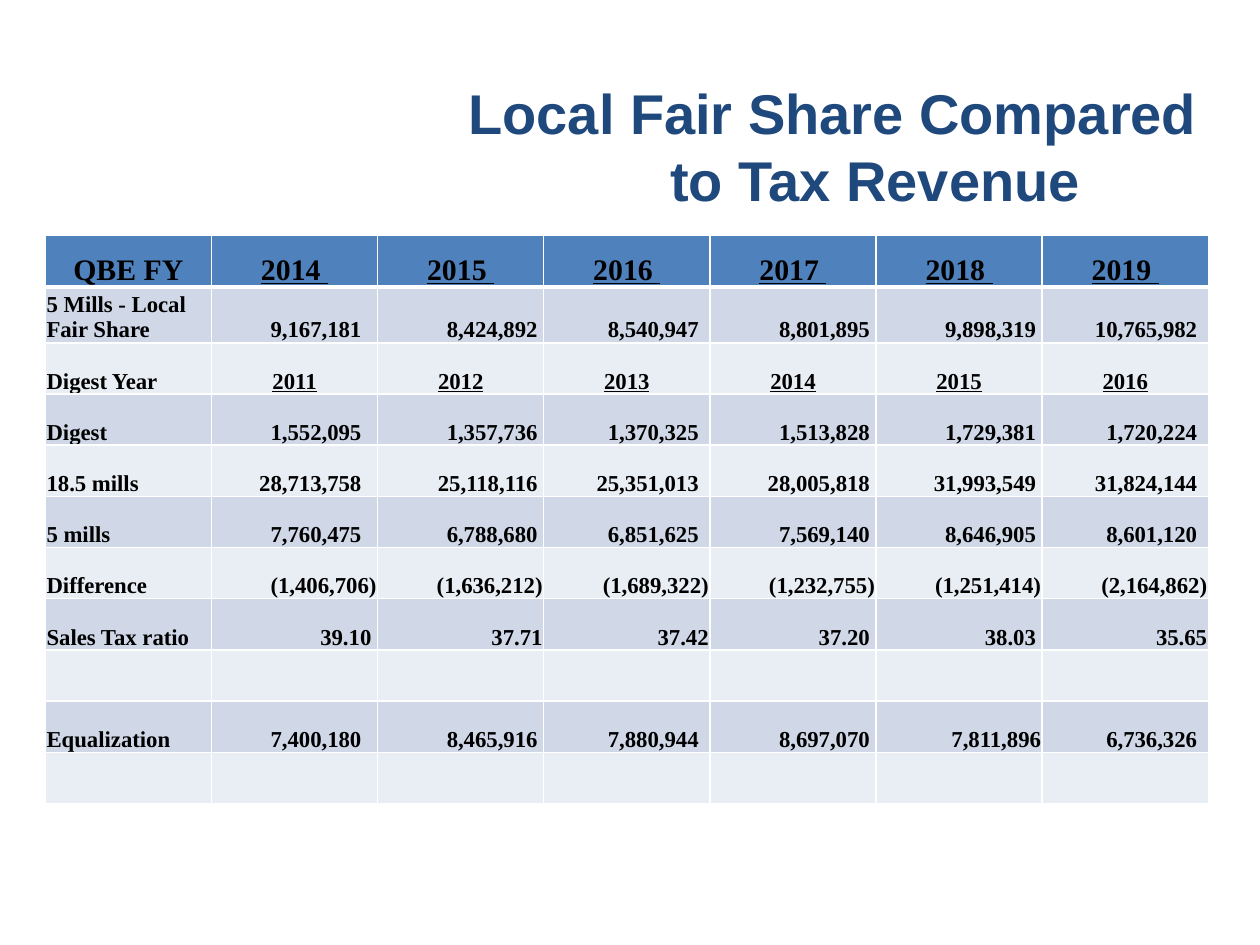
"""Build the slide comparing local fair share with tax revenue."""
import lxml.etree
import pptx
import pptx.dml.color
import pptx.enum.text
import pptx.oxml.ns
import pptx.util

COLORS = {"title": "1F497D", "text": "000000", "header": "4F81BD",
          "odd": "D0D8E8", "even": "E9EDF4", "rule": "FFFFFF"}
ALIGN = pptx.enum.text.PP_ALIGN
MIDDLE = pptx.enum.text.MSO_ANCHOR.MIDDLE
BOTTOM = pptx.enum.text.MSO_ANCHOR.BOTTOM
FLUSH = [0.01] * 6
INDENTED = [0.13, 0.05, 0.09, 0.05, 0.05, 0.09]
RATIO = [0.05, 0.01, 0.01, 0.05, 0.05, 0.01]
EQUALIZED = [0.13, 0.05, 0.09, 0.05, 0.01, 0.09]
ROWS = [
    ("QBE FY", "2014 |2015 |2016 |2017 |2018 |2019 ", FLUSH),
    ("5 Mills - Local Fair Share",
     "9,167,181|8,424,892|8,540,947|8,801,895|9,898,319|10,765,982", INDENTED),
    ("Digest Year", "2011|2012|2013|2014|2015|2016", FLUSH),
    ("Digest", "1,552,095|1,357,736|1,370,325|1,513,828|1,729,381|1,720,224", INDENTED),
    ("18.5 mills",
     "28,713,758|25,118,116|25,351,013|28,005,818|31,993,549|31,824,144", INDENTED),
    ("5 mills", "7,760,475|6,788,680|6,851,625|7,569,140|8,646,905|8,601,120", INDENTED),
    ("Difference",
     "(1,406,706)|(1,636,212)|(1,689,322)|(1,232,755)|(1,251,414)|(2,164,862)", FLUSH),
    ("Sales Tax ratio", "39.10|37.71|37.42|37.20|38.03|35.65", RATIO),
    ("", "|||||", FLUSH),
    ("Equalization",
     "7,400,180|8,465,916|7,880,944|8,697,070|7,811,896|6,736,326", EQUALIZED),
    ("", "|||||", FLUSH),
]
YEAR_ROWS = (0, 2)


def write(para, text, color, **font_format):
    span = para.add_run()
    span.text = text
    span.font.color.rgb = pptx.dml.color.RGBColor.from_string(COLORS[color])
    for name, value in font_format.items():
        setattr(span.font, name, value)


def add_border(cell, side, points):
    tag = pptx.oxml.ns.qn(f"a:ln{side}")
    line = lxml.etree.SubElement(cell._tc.get_or_add_tcPr(), tag,
                                 w=str(pptx.util.Pt(points)))
    fill = lxml.etree.SubElement(line, pptx.oxml.ns.qn("a:solidFill"))
    lxml.etree.SubElement(fill, pptx.oxml.ns.qn("a:srgbClr"), val=COLORS["rule"])


deck = pptx.Presentation()
deck.slide_width = pptx.util.Inches(10)
deck.slide_height = pptx.util.Inches(7.5)
page = deck.slides.add_slide(deck.slide_layouts[6])

box = page.shapes.add_textbox(*map(pptx.util.Inches, (3.62, 0.53, 6.08, 1.25)))
frame = box.text_frame
frame_format = {"word_wrap": True, "vertical_anchor": MIDDLE,
                "margin_left": 0, "margin_right": pptx.util.Inches(0.1)}
for name, value in frame_format.items():
    setattr(frame, name, value)
title_lines = [("Local Fair Share Compared", 0), ("to Tax Revenue", 0.67)]
for index, (text, indent) in enumerate(title_lines):
    para = frame.add_paragraph() if index else frame.paragraphs[0]
    para.alignment = ALIGN.CENTER
    para._p.get_or_add_pPr().set("marL", str(pptx.util.Inches(indent)))
    write(para, text, "title", name="Arial", size=pptx.util.Pt(32), bold=True)

table_area = map(pptx.util.Inches, (0.36, 1.87, 9.23, 4.47))
table = page.shapes.add_table(len(ROWS), 7, *table_area).table
for row, (label, values, insets) in enumerate(ROWS):
    band = "header" if row == 0 else "odd" if row % 2 else "even"
    texts = [label, *values.split("|")]
    for column, (text, inset) in enumerate(zip(texts, [0.01, *insets])):
        cell = table.cell(row, column)
        cell_format = {"vertical_anchor": BOTTOM, "margin_left": pptx.util.Inches(0.01),
                       "margin_top": pptx.util.Inches(0.01), "margin_bottom": 0,
                       "margin_right": pptx.util.Inches(inset)}
        for name, value in cell_format.items():
            setattr(cell, name, value)
        for side in "LRTB":
            heavy = (row, side) in ((0, "B"), (1, "T"))
            add_border(cell, side, 3 if heavy else 1)
        cell.fill.solid()
        cell.fill.fore_color.rgb = pptx.dml.color.RGBColor.from_string(COLORS[band])
        if text:
            para = cell.text_frame.paragraphs[0]
            centred = row == 0 or (row in YEAR_ROWS and column)
            para.alignment = ALIGN.CENTER if centred else ALIGN.RIGHT if column else ALIGN.LEFT
            write(para, text, "text", name="Times New Roman", bold=True,
                  size=pptx.util.Pt(17 if row == 0 else 13),
                  underline=row in YEAR_ROWS and column > 0)

deck.save("out.pptx")
